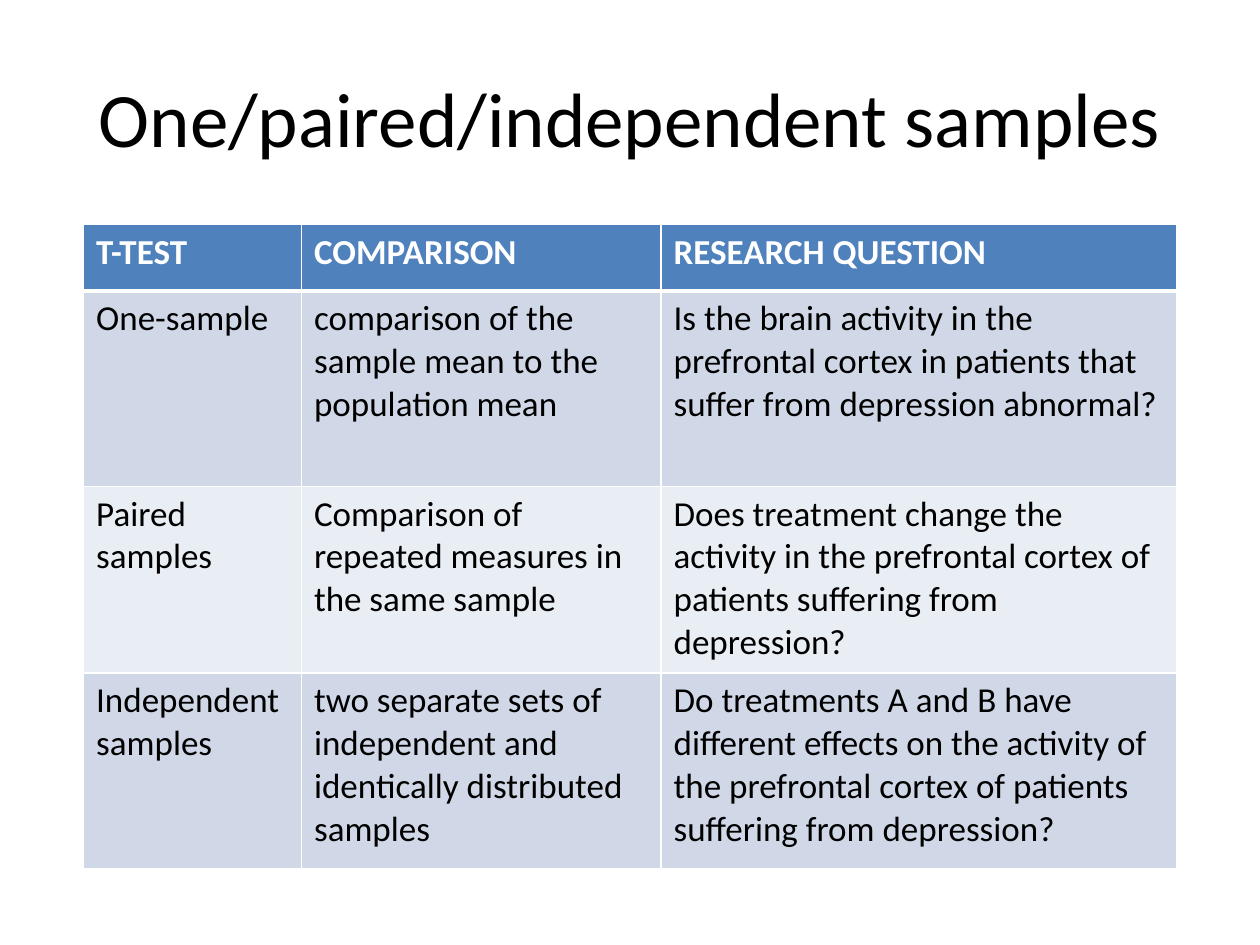
from typing import NamedTuple

from lxml import etree
from pptx import Presentation, util as u
from pptx.dml.color import RGBColor
from pptx.enum import text as t
from pptx.oxml import ns

HUES = {"ink": "000000", "white": "FFFFFF", "head": "4F81BD",
        "odd": "D0D8E8", "even": "E9EDF4"}
FACE = "Calibri"


class Row(NamedTuple):
    high: float
    fill: str
    words: tuple[str, str, str]
    ink: str = "ink"
    bold: bool = False


WIDTHS = (124.5, 205.5, 294.5)
ROWS = (
    Row(38, "head", ("T-TEST", "COMPARISON", "RESEARCH QUESTION"), "white", True),
    Row(111.75, "odd", (
        "One-sample",
        "comparison of the sample mean to the population mean",
        "Is the brain activity in the prefrontal cortex in patients that "
        "suffer from depression abnormal?")),
    Row(106.75, "even", (
        "Paired samples",
        "Comparison of repeated measures in the same sample",
        "Does treatment change the activity in the prefrontal cortex of "
        "patients suffering from depression?")),
    Row(111.75, "odd", (
        "Independent samples",
        "two separate sets of independent and identically distributed samples",
        "Do treatments A and B have different effects on the activity of the "
        "prefrontal cortex of patients suffering from depression?")),
)


def style(par, size: float, ink: str, bold: bool = False) -> None:
    font = par.font
    font.name, font.size, font.bold = FACE, u.Pt(size), bold
    font.color.rgb = RGBColor.from_string(HUES[ink])


def edge(cell, side: str, wide: float) -> None:
    props = cell._tc.get_or_add_tcPr()
    line = etree.SubElement(props, ns.qn(f"a:ln{side}"), w=str(int(u.Pt(wide))))
    fill = etree.SubElement(line, ns.qn("a:solidFill"))
    etree.SubElement(fill, ns.qn("a:srgbClr"), val=HUES["white"])


def draw_title(slide, words: str) -> None:
    box = slide.shapes.add_textbox(u.Pt(36), u.Pt(21.6), u.Pt(648), u.Pt(90))
    frame = box.text_frame
    frame.word_wrap = True
    frame.vertical_anchor = t.MSO_ANCHOR.MIDDLE
    par = frame.paragraphs[0]
    par.text = words
    par.alignment = t.PP_ALIGN.CENTER
    style(par, 44, "ink")


def draw_cell(cell, row: Row, words: str, base: float) -> None:
    # Borders come before the fill in the cell's XML
    for side, wide in (("L", 1), ("R", 1), ("T", 1), ("B", base)):
        edge(cell, side, wide)
    cell.fill.solid()
    cell.fill.fore_color.rgb = RGBColor.from_string(HUES[row.fill])
    cell.text = words
    style(cell.text_frame.paragraphs[0], 20, row.ink, row.bold)


def draw_table(slide, rows: tuple[Row, ...]) -> None:
    high = sum(row.high for row in rows)
    grid = slide.shapes.add_table(len(rows), len(WIDTHS), u.Pt(47.75), u.Pt(128.25),
                                  u.Pt(sum(WIDTHS)), u.Pt(high)).table
    for col, wide in zip(grid.columns, WIDTHS):
        col.width = u.Pt(wide)
    for i, row in enumerate(rows):
        grid.rows[i].height = u.Pt(row.high)
        for j, words in enumerate(row.words):
            draw_cell(grid.cell(i, j), row, words, 3 if i == 0 else 1)
    # The rule under the heading is shared with the first body row
    for j in range(len(WIDTHS)):
        props = grid.cell(1, j)._tc.tcPr
        props.find(ns.qn("a:lnT")).set("w", str(int(u.Pt(3))))


def main() -> None:
    deck = Presentation()
    deck.slide_width, deck.slide_height = u.Pt(720), u.Pt(540)
    slide = deck.slides.add_slide(deck.slide_layouts[6])
    draw_title(slide, "One/paired/independent samples")
    draw_table(slide, ROWS)
    deck.save("out.pptx")


if __name__ == "__main__":
    main()
